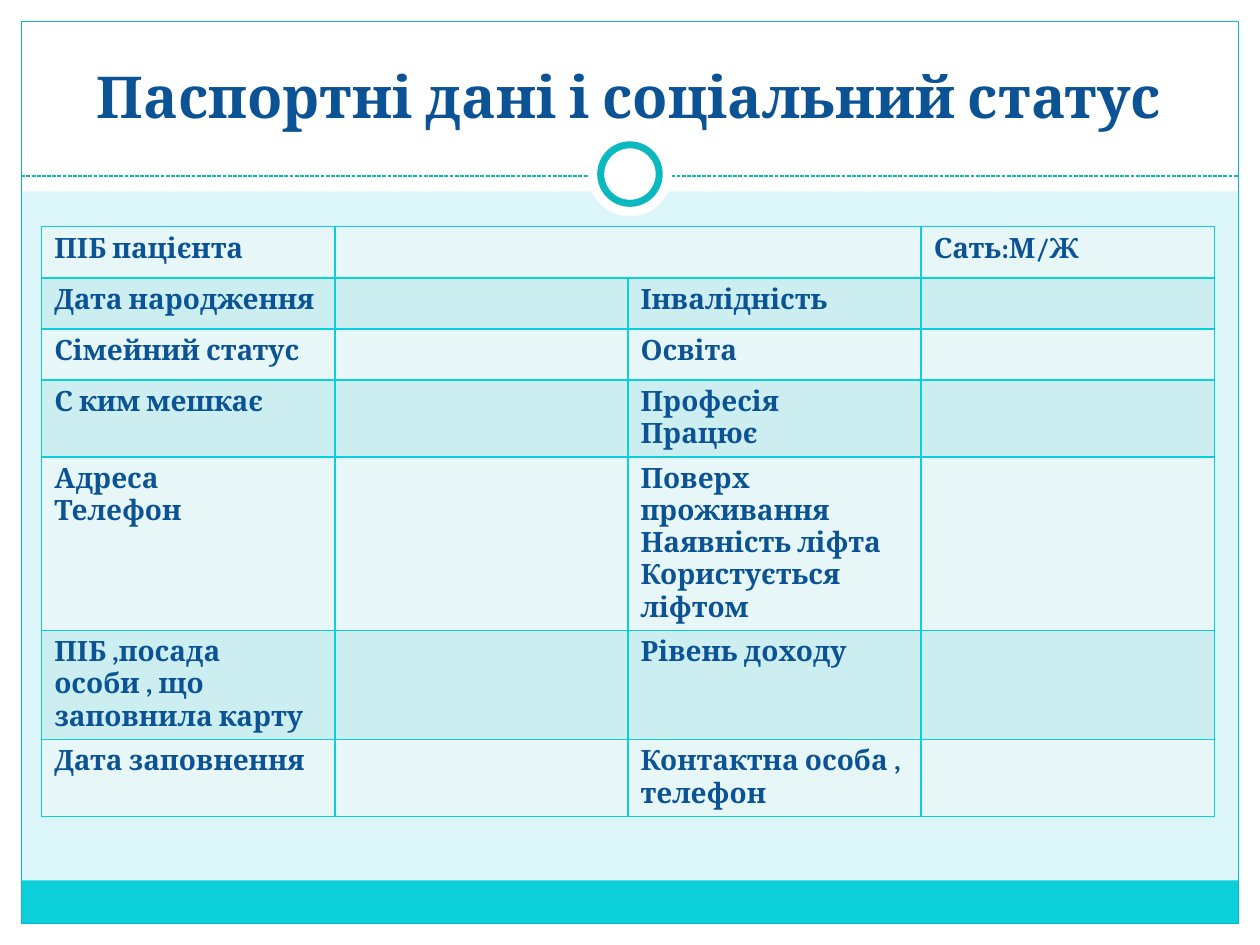
from lxml import etree
from pptx import Presentation
from pptx.dml.color import RGBColor
from pptx.enum.dml import MSO_LINE_DASH_STYLE as DASH
from pptx.enum.shapes import MSO_CONNECTOR, MSO_SHAPE
from pptx.enum.text import MSO_ANCHOR, MSO_AUTO_SIZE, PP_ALIGN
from pptx.oxml.ns import qn
from pptx.util import Cm, Pt

COLORS = {
    "background": "DBF5F9",
    "white": "FFFFFF",
    "accent": "0BD0D9",
    "outline": "0AB8BF",
    "text": "0B5394",
    "light row": "E7F7F8",
    "dark row": "CCEEF1",
}
WIDTH, HEIGHT, MARGIN = 25.4, 19.05, 0.43
HEADER = 3.86

# Label and second label of each row; the first row is laid out differently
ROWS = [
    ["ПІБ пацієнта", "", "", "Сать:М/Ж"],
    ["Дата народження", "", "Інвалідність", ""],
    ["Сімейний статус", "", "Освіта", ""],
    ["С ким мешкає", "", "Професія\vПрацює", ""],
    ["Адреса\vТелефон", "", "Поверх проживання \vНаявність ліфта\vКористується ліфтом", ""],
    ["ПІБ ,посада особи , що заповнила карту", "", "Рівень доходу", ""],
    ["Дата заповнення", "", "Контактна особа , телефон", ""],
]


def color(name):
    return RGBColor.from_string(COLORS[name])


class SlideBuilder:
    font_name = "Cambria"

    def __init__(self, slide):
        self.slide = slide
        fill = slide.background.fill
        fill.solid()
        fill.fore_color.rgb = color("background")

    def shape(self, kind, left, top, width, height, fill=None, line_width=None):
        shape = self.slide.shapes.add_shape(kind, Cm(left), Cm(top), Cm(width), Cm(height))
        shape.shadow.inherit = False
        if fill:
            shape.fill.solid()
            shape.fill.fore_color.rgb = color(fill)
        else:
            shape.fill.background()
        if line_width:
            shape.line.color.rgb = color("outline")
            shape.line.width = Pt(line_width)
        else:
            shape.line.fill.background()

    def circle(self, center_x, center_y, size, line_width=None):
        self.shape(MSO_SHAPE.OVAL, center_x - size / 2, center_y - size / 2,
                   size, size, "white", line_width)

    def dashed_line(self, left, right, y):
        line = self.slide.shapes.add_connector(
            MSO_CONNECTOR.STRAIGHT, Cm(left), Cm(y), Cm(right), Cm(y))
        line.line.color.rgb = color("outline")
        line.line.width = Pt(0.75)
        line.line.dash_style = DASH.SQUARE_DOT
        etree.SubElement(line.element.spPr, qn("a:effectLst"))

    def format_text(self, text_frame, size):
        for paragraph in text_frame.paragraphs:
            for run in paragraph.runs:
                run.font.name = self.font_name
                run.font.size = Pt(size)
                run.font.bold = True
                run.font.color.rgb = color("text")

    def title(self, text, left, top, width, height):
        title = self.slide.shapes.title
        title.left, title.top, title.width, title.height = map(Cm, (left, top, width, height))
        text_frame = title.text_frame
        text_frame.text = text
        text_frame.word_wrap = True
        text_frame.auto_size = MSO_AUTO_SIZE.NONE
        text_frame.vertical_anchor = MSO_ANCHOR.BOTTOM
        text_frame.paragraphs[0].alignment = PP_ALIGN.CENTER
        self.format_text(text_frame, 33)
        # Bring the title in front of the frame
        self.slide.shapes.element.append(title.element)

    def cell_borders(self, cell):
        properties = cell._tc.get_or_add_tcPr()
        for side in ("lnL", "lnR", "lnT", "lnB"):
            border = etree.SubElement(properties, qn(f"a:{side}"), w=str(Pt(1)))
            fill = etree.SubElement(border, qn("a:solidFill"))
            etree.SubElement(fill, qn("a:srgbClr"), val=COLORS["accent"])

    def table(self, rows, left, top, column_width, row_height):
        columns = len(rows[0])
        table = self.slide.shapes.add_table(
            len(rows), columns, Cm(left), Cm(top),
            Cm(column_width * columns), Cm(row_height * len(rows))).table
        table.first_row = False
        for row_index, row in enumerate(rows):
            for column_index, text in enumerate(row):
                cell = table.cell(row_index, column_index)
                if text:
                    cell.text_frame.text = text
                    self.format_text(cell.text_frame, 16)
                self.cell_borders(cell)
                cell.fill.solid()
                cell.fill.fore_color.rgb = color("dark row" if row_index % 2 else "light row")
        return table


def main():
    presentation = Presentation()
    presentation.slide_width, presentation.slide_height = Cm(WIDTH), Cm(HEIGHT)
    builder = SlideBuilder(presentation.slides.add_slide(presentation.slide_layouts[5]))

    # White margins and header
    for box in (
        (0, HEIGHT - MARGIN, WIDTH, MARGIN),
        (0, 0, WIDTH, HEADER),
        (0, 0, MARGIN, HEIGHT),
        (WIDTH - MARGIN, 0, MARGIN, HEIGHT),
    ):
        builder.shape(MSO_SHAPE.RECTANGLE, *box, fill="white")

    # Footer band and frame
    inner_width = WIDTH - 2 * MARGIN
    builder.shape(MSO_SHAPE.RECTANGLE, MARGIN, 17.75, inner_width, 0.87, "accent")
    builder.shape(MSO_SHAPE.RECTANGLE, MARGIN, MARGIN, inner_width,
                  HEIGHT - 2 * MARGIN, line_width=0.75)

    # Divider with ring
    builder.dashed_line(MARGIN, WIDTH - MARGIN, 3.55)
    builder.circle(WIDTH / 2, 3.51, 1.7)
    builder.circle(WIDTH / 2, 3.51, 1.18, line_width=4)

    # Title and patient table
    builder.title("Паспортні дані і соціальний статус", 0.84, 0.64, 23.7, 2.11)
    table = builder.table(ROWS, 0.84, 4.57, 5.91, 1.03)
    table.cell(0, 1).merge(table.cell(0, 2))

    presentation.save("out.pptx")


if __name__ == "__main__":
    main()
